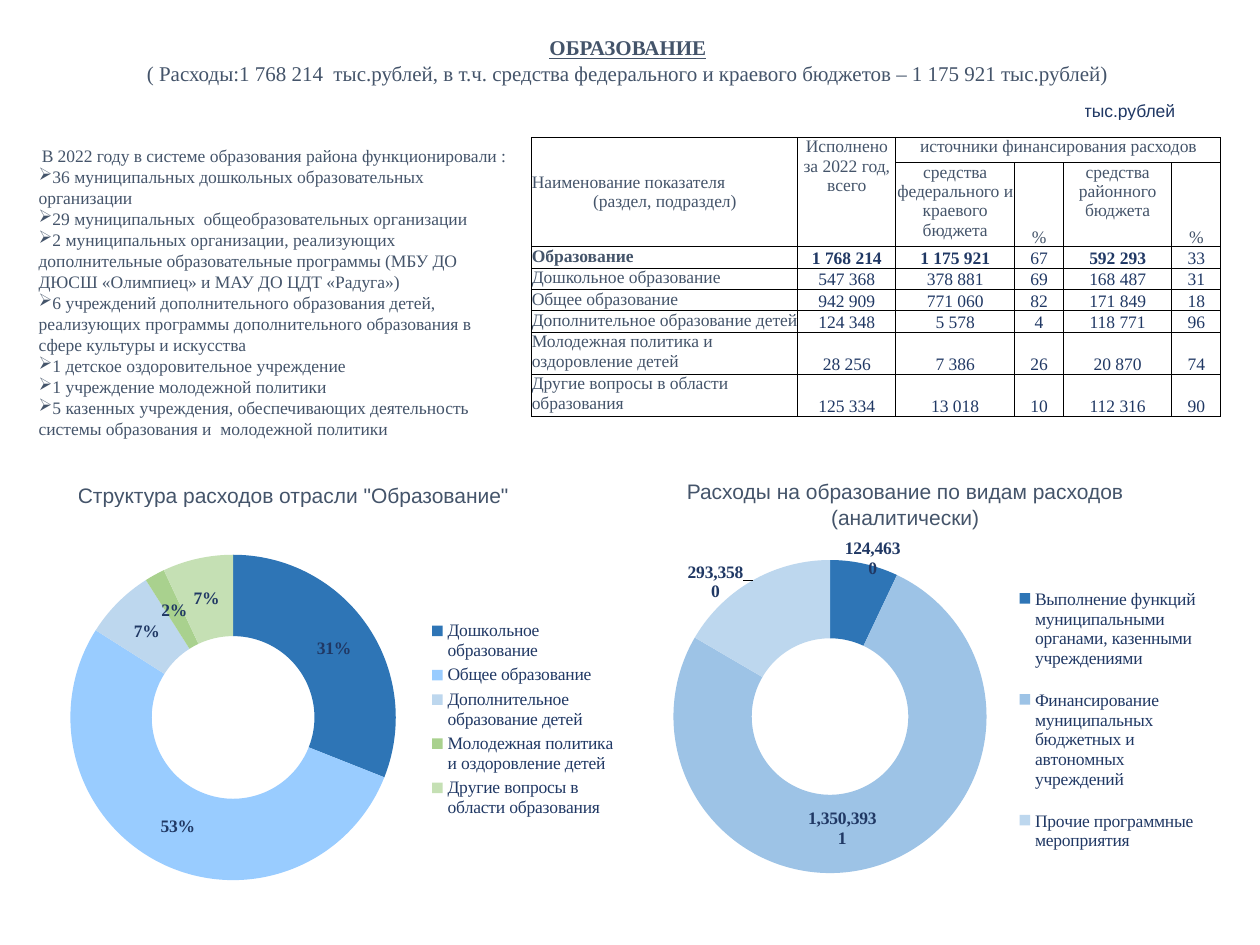
import copy
import dataclasses

import lxml.etree
import pptx
import pptx.chart.data
import pptx.dml.color
import pptx.enum.chart
import pptx.enum.text
import pptx.oxml
import pptx.oxml.ns
import pptx.util

Cm, Pt = pptx.util.Cm, pptx.util.Pt
Align = pptx.enum.text.PP_ALIGN
Anchor = pptx.enum.text.MSO_ANCHOR
qn = pptx.oxml.ns.qn


@dataclasses.dataclass(frozen=True)
class Theme:
    """Colours, fonts and type sizes of the slide."""
    slate: str = "44546A"
    navy: str = "203864"
    line: str = "000000"
    serif: str = "Times New Roman"
    sans: str = "Arial"
    small: int = 10
    large: int = 12
    blue: str = "2E75B6"
    pale: str = "BDD7EE"


theme = Theme()


def dress(font, color=theme.slate, size=theme.small, name=theme.serif, bold=False, **more):
    """Give a font its colour and format values."""
    form = {"size": Pt(size), "name": name, "bold": bold, **more}
    for key, val in form.items():
        setattr(font, key, val)
    font.color.rgb = pptx.dml.color.RGBColor.from_string(color)


def write(par, text, align=Align.LEFT, mark=None, **look):
    """Fill a paragraph with one formatted run."""
    par.alignment = align
    if mark:
        lxml.etree.SubElement(par._p.get_or_add_pPr(), qn("a:buChar"), char=mark)
    run = par.add_run()
    run.text = text
    dress(run.font, **look)


def add_text(slide, box, items):
    """Add a wrapped text box with one paragraph per item."""
    frame = slide.shapes.add_textbox(*map(Cm, box)).text_frame
    frame.word_wrap = True
    frame.auto_size = pptx.enum.text.MSO_AUTO_SIZE.SHAPE_TO_FIT_TEXT
    for num, item in enumerate(items):
        write(frame.add_paragraph() if num else frame.paragraphs[0], **item)


def border(cell):
    """Draw thin lines on all sides of a cell."""
    props = cell._tc.get_or_add_tcPr()
    for num, side in enumerate(("lnL", "lnR", "lnT", "lnB")):
        line = lxml.etree.Element(qn(f"a:{side}"), w=str(Pt(0.5)))
        fill = lxml.etree.SubElement(line, qn("a:solidFill"))
        lxml.etree.SubElement(fill, qn("a:srgbClr"), val=theme.line)
        props.insert(num, line)


def add_grid(slide, left, top, cols, rows, ruled=False):
    """Add a plain table with the given column widths and row heights."""
    box = (left, top, sum(cols), sum(rows))
    grid = slide.shapes.add_table(len(rows), len(cols), *map(Cm, box)).table
    grid.first_row = grid.horz_banding = False
    for col, width in zip(grid.columns, cols):
        col.width = Cm(width)
    for row, height in zip(grid.rows, rows):
        row.height = Cm(height)
    for cell in grid.iter_cells():
        cell.fill.background()
        for side in ("left", "right", "top", "bottom"):
            setattr(cell, f"margin_{side}", 0)
        if ruled:
            border(cell)
    return grid


def put(cell, text, anchor=Anchor.BOTTOM, **look):
    """Write one paragraph into a cell."""
    cell.vertical_anchor = anchor
    write(cell.text_frame.paragraphs[0], text, **look)


def add_label(slide, left, top, width, text, **look):
    """Add a one-cell table that holds a caption."""
    put(add_grid(slide, left, top, [width], [0.46]).cell(0, 0), text, **look)


def add_costs(slide):
    """Add the table of costs by source."""
    cols = [5.36, 1.98, 2.39, 0.99, 2.18, 0.99]
    rows = [0.51, 1.68] + [0.43] * 4 + [0.84] * 2
    grid = add_grid(slide, 10.72, 2.77, cols, rows, True)
    for start, end in (((0, 0), (1, 0)), ((0, 1), (1, 1)), ((0, 2), (0, 5))):
        grid.cell(*start).merge(grid.cell(*end))
    name = grid.cell(0, 0)
    put(name, "Наименование показателя", Anchor.MIDDLE)
    write(name.text_frame.add_paragraph(), "(раздел, подраздел)", Align.CENTER)
    heads = [
        (0, 1, "Исполнено за 2022 год, всего"),
        (0, 2, "источники финансирования расходов"),
        (1, 2, "средства федерального и краевого бюджета"),
        (1, 3, "%"),
        (1, 4, "средства районного бюджета"),
        (1, 5, "%"),
    ]
    for row, col, text in heads:
        anchor = Anchor.BOTTOM if text == "%" else Anchor.TOP
        put(grid.cell(row, col), text, anchor, align=Align.CENTER)
    data = [
        ("Образование", "1 768 214", "1 175 921", "67", "592 293", "33"),
        ("Дошкольное образование", "547 368", "378 881", "69", "168 487", "31"),
        ("Общее образование", "942 909", "771 060", "82", "171 849", "18"),
        ("Дополнительное образование детей", "124 348", "5 578", "4", "118 771", "96"),
        ("Молодежная политика и оздоровление детей", "28 256", "7 386", "26", "20 870", "74"),
        ("Другие вопросы в области образования", "125 334", "13 018", "10", "112 316", "90"),
    ]
    for row, (title, *nums) in enumerate(data, 2):
        total = row == 2
        put(grid.cell(row, 0), title, Anchor.TOP, bold=total)
        for col, num in enumerate(nums, 1):
            put(grid.cell(row, col), num, align=Align.CENTER, color=theme.navy,
                bold=total and col in (1, 2, 4))


def place(node, spot, **vals):
    """Set a manual layout on a chart part."""
    for old in node.findall(qn("c:layout")):
        node.remove(old)
    lay = lxml.etree.Element(qn("c:layout"))
    man = lxml.etree.SubElement(lay, qn("c:manualLayout"))
    for key, val in vals.items():
        lxml.etree.SubElement(man, qn(f"c:{key}"), val=str(val))
    node.insert(spot, lay)


def shift(block, moves):
    """Move the label of each point by its share of the chart size."""
    parts = [kid for kid in block if kid.tag != qn("c:showLeaderLines")]
    for num, (x, y) in enumerate(moves):
        label = lxml.etree.Element(qn("c:dLbl"))
        lxml.etree.SubElement(label, qn("c:idx"), val=str(num))
        label.extend(copy.deepcopy(parts))
        place(label, 1, x=x, y=y)
        block.insert(num, label)


def add_ring(slide, box, data, colors, ring, key, moves=()):
    """Add a doughnut chart with a legend and labels."""
    feed = pptx.chart.data.CategoryChartData(number_format="#,##0")
    feed.categories = list(data)
    feed.add_series("Series 1", list(data.values()))
    kind = pptx.enum.chart.XL_CHART_TYPE.DOUGHNUT
    chart = slide.shapes.add_chart(kind, *map(Cm, box), feed).chart
    chart.has_title = False
    dress(chart.font, theme.line)
    chart.has_legend = True
    chart.legend.position = pptx.enum.chart.XL_LEGEND_POSITION.RIGHT
    chart.legend.include_in_layout = False
    dress(chart.legend.font, theme.navy)
    edge = dict(xMode="edge", yMode="edge")
    sides = ("x", "y", "w", "h")
    area = chart._chartSpace.find(f".//{qn('c:plotArea')}")
    place(area, 0, layoutTarget="inner", **edge, **dict(zip(sides, ring)))
    place(chart.legend._element, 1, **edge, **dict(zip(sides, key)))
    plot = chart.plots[0]
    plot.vary_by_categories = True
    series = plot.series[0]
    for num, color in enumerate(colors):
        fill = series.points[num].format.fill
        fill.solid()
        fill.fore_color.rgb = pptx.dml.color.RGBColor.from_string(color)
    labels = series.data_labels
    form = {"show_percentage": True, "show_value": bool(moves),
            "number_format": "#,##0" if moves else "0%", "number_format_is_linked": False}
    for name, val in form.items():
        setattr(labels, name, val)
    dress(labels.font, theme.navy, bold=True)
    if moves:
        block = labels._element
        split = lxml.etree.Element(qn("c:separator"))
        split.text = "\n"
        block.find(qn("c:showBubbleSize")).addnext(split)
        shift(block, moves)


def main():
    """Build the slide and save it."""
    deck = pptx.Presentation()
    deck.slide_width, deck.slide_height = Cm(25.4), Cm(19.05)
    slide = deck.slides.add_slide(deck.slide_layouts[6])
    mid = {"align": Align.CENTER}
    big = {**mid, "size": theme.large}
    add_text(slide, (0.66, 0.58, 24, 1.27), [
        {"text": "ОБРАЗОВАНИЕ", "bold": True, "underline": True, **big},
        {"text": "( Расходы:1 768 214  тыс.рублей, в т.ч. средства федерального и краевого бюджетов – 1 175 921 тыс.рублей)", **big},
    ])
    facts = [
        "36 муниципальных дошкольных образовательных организации",
        "29 муниципальных  общеобразовательных организации",
        "2 муниципальных организации, реализующих  дополнительные образовательные программы (МБУ ДО ДЮСШ «Олимпиец» и МАУ ДО ЦДТ «Радуга»)",
        "6 учреждений дополнительного образования детей, реализующих программы дополнительного образования в сфере культуры и искусства",
        "1 детское оздоровительное учреждение",
        "1 учреждение молодежной политики",
        "5 казенных учреждения, обеспечивающих деятельность системы образования и  молодежной политики",
    ]
    intro = {"text": "В 2022 году в системе образования района функционировали :", **mid}
    add_text(slide, (0.53, 2.79, 9.98, 6.25), [intro] + [{"text": fact, "mark": "➢"} for fact in facts])
    add_costs(slide)
    add_label(slide, 21.85, 1.98, 2.54, "тыс.рублей", color=theme.navy, name=theme.sans)
    add_label(slide, 1.57, 9.73, 9.73, "Структура расходов отрасли \"Образование\"", size=theme.large, name=theme.sans)
    add_text(slide, (12.5, 9.53, 11.5, 1.27), [
        {"text": "Расходы на образование по видам расходов (аналитически)", "name": theme.sans, **big}])
    add_ring(slide, (0.81, 10.82, 11.79, 7.29), {
        "Дошкольное образование": 31,
        "Общее образование": 53,
        "Дополнительное образование детей": 7,
        "Молодежная политика и оздоровление детей": 2,
        "Другие вопросы в области образования": 7,
    }, (theme.blue, "99CCFF", theme.pale, "A9D18E", "C5E0B4"), (0.05, 0.05, 0.56, 0.9), (0.66, 0.22, 0.33, 0.57))
    add_ring(slide, (13.23, 10.85, 11.3, 7.34), {
        "Выполнение функций муниципальными органами, казенными учреждениями": 124463,
        "Финансирование муниципальных бюджетных и автономных учреждений": 1350393,
        "Прочие программные мероприятия": 293358,
    }, (theme.blue, "9DC3E6", theme.pale), (0.03, 0.06, 0.56, 0.86), (0.63, 0.08, 0.35, 0.84),
        [(0.03, -0.12), (-0.04, 0), (-0.1, -0.09)])
    deck.save("out.pptx")


if __name__ == "__main__":
    main()
